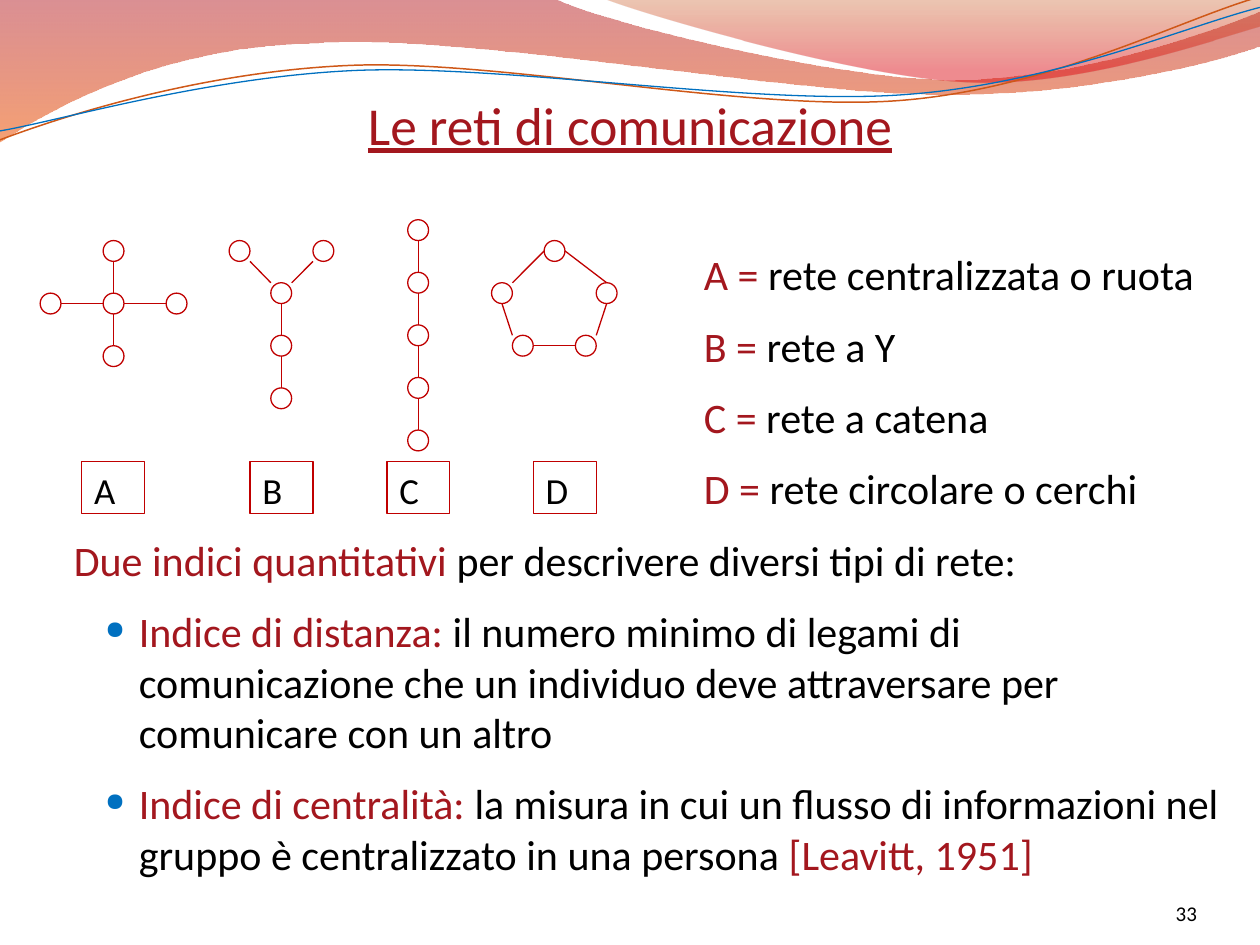
import dataclasses
import itertools
import typing

import lxml.etree
import pptx
import pptx.dml.color
import pptx.enum.shapes
import pptx.enum.text
import pptx.oxml.ns
import pptx.util

Cm = pptx.util.Cm
Pt = pptx.util.Pt
qn = pptx.oxml.ns.qn
Align = pptx.enum.text.PP_ALIGN
Anchor = pptx.enum.text.MSO_ANCHOR
Shape = pptx.enum.shapes.MSO_SHAPE
Point = tuple[float, float]


@dataclasses.dataclass(frozen=True)
class Theme:
    font: str = "Calibri"
    accent: str = "A3171E"
    ink: str = "000000"
    outline: str = "C00000"
    bullet: str = "0070C0"
    title: float = 30.5
    body: float = 24
    label: float = 21
    number: float = 12
    gap: float = 11.9
    hairline: float = 0.75


class Stop(typing.NamedTuple):
    position: float
    color: str
    opacity: int


@dataclasses.dataclass(frozen=True)
class Wave:
    start: Point
    segments: list[tuple[Point, ...]]
    stops: tuple[Stop, ...] = ()
    color: str = ""
    width: float = 0


class Link(typing.NamedTuple):
    start: int
    end: int
    leave: str
    arrive: str


@dataclasses.dataclass(frozen=True)
class Network:
    label: str
    label_x: float
    nodes: list[Point]
    links: list[Link]


THEME = Theme()
RADIUS = 0.21
STEP = 1.06
SIDES = {"N": (0, -1), "S": (0, 1), "W": (-1, 0), "E": (1, 0),
         "NW": (-1, -1), "NE": (1, -1), "SW": (-1, 1), "SE": (1, 1)}

WAVES = [
    Wave((0, 0), [((11.18, -0.03),), ((12.09, 0.43), (16.87, 1.6), (19.25, 1.6)),
                  ((21.67, 1.6), (24.33, 0.66), (25.4, 0.23)), ((25.43, 0.91),),
                  ((24.97, 1.12), (22.1, 1.93), (18.95, 1.9)),
                  ((15.8, 1.9), (9.7, 0.71), (6.53, 0.86)),
                  ((3.28, 0.91), (1.17, 2.11), (-0.03, 2.87))],
         stops=(Stop(0, "AF0911", 45), Stop(1, "EE5300", 55))),
    Wave((12.17, -0.03), [((12.93, 0.28), (17.32, 1.57), (19.53, 1.65)),
                          ((21.74, 1.75), (24.41, 0.81), (25.4, 0.53)), ((25.4, 0),)],
         stops=(Stop(0, "C24400", 30), Stop(0.8, "DC000B", 45))),
    Wave((0, 2.82), [((1.22, 2.36), (4.01, 1.45), (7.04, 1.32)),
                     ((10.03, 1.19), (15.06, 2.26), (18.11, 2.03)),
                     ((21.16, 1.8), (23.83, 0.38), (25.35, -0.05))],
         color="CF5818", width=0.85),
    Wave((0, 2.64), [((1.19, 2.44), (4.17, 1.55), (7.19, 1.42)),
                     ((10.24, 1.3), (15.16, 2.13), (18.21, 1.91)),
                     ((21.23, 1.7), (23.9, 0.53), (25.4, 0.15))],
         color="0070C0", width=0.75),
]

NETWORKS = [
    Network("A", 2.28,
            [(2.29, 6.12), (2.29, 5.06), (2.29, 7.18), (1.02, 6.12), (3.56, 6.12)],
            [Link(1, 0, "S", "N"), Link(0, 2, "S", "N"),
             Link(3, 0, "E", "W"), Link(0, 4, "E", "W")]),
    Network("B", 5.67,
            [(4.83, 5.06), (6.52, 5.06), (5.67, 5.91), (5.67, 6.97), (5.67, 8.03)],
            [Link(0, 2, "SE", "NW"), Link(1, 2, "SW", "NE"),
             Link(2, 3, "S", "N"), Link(3, 4, "S", "N")]),
    Network("C", 8.43,
            [(8.43, 4.64 + i * STEP) for i in range(5)],
            [Link(i, i + 1, "S", "N") for i in range(4)]),
    Network("D", 11.38,
            [(11.18, 5.06), (12.23, 5.91), (11.81, 6.97), (10.54, 6.97), (10.12, 5.91)],
            [Link(0, 1, "E", "N"), Link(1, 2, "S", "NE"), Link(2, 3, "W", "E"),
             Link(3, 4, "NW", "S"), Link(4, 0, "NE", "W")]),
]

LEGEND = [("A = ", "rete centralizzata o ruota"), ("B =", " rete a Y"),
          ("C =", " rete a catena"), ("D =", " rete circolare o cerchi")]
INDICES = [
    ("Due indici quantitativi ", "per descrivere diversi tipi di rete:"),
    ("Indice di distanza: ", "il numero minimo di legami di comunicazione che un "
     "individuo deve attraversare per comunicare con un altro"),
    ("Indice di centralità: ", "la misura in cui un flusso di informazioni nel gruppo "
     "è centralizzato in una persona ", "[Leavitt, 1951]"),
]


def rgb(color: str):
    return pptx.dml.color.RGBColor.from_string(color)


def add_text(p, text: str, *, size: float, color: str = THEME.ink, underline: bool = False):
    r = p.add_run()
    r.text = text
    r.font.name, r.font.size = THEME.font, Pt(size)
    r.font.color.rgb, r.font.underline = rgb(color), underline


def prepare(tf, anchor=Anchor.TOP, inset: Point = (0, 0)):
    tf.word_wrap, tf.vertical_anchor = True, anchor
    tf.margin_left = tf.margin_right = Cm(inset[0])
    tf.margin_top = tf.margin_bottom = Cm(inset[1])
    return tf


def add_box(s, x: float, y: float, w: float, h: float, anchor=Anchor.TOP):
    return prepare(s.shapes.add_textbox(Cm(x), Cm(y), Cm(w), Cm(h)).text_frame, anchor)


def add_bullet(p):
    pPr = p._p.get_or_add_pPr()
    pPr.set("marL", str(Cm(1.31)))
    pPr.set("indent", str(-Cm(0.68)))
    clr = lxml.etree.SubElement(pPr, qn("a:buClr"))
    lxml.etree.SubElement(clr, qn("a:srgbClr"), val=THEME.bullet)
    lxml.etree.SubElement(pPr, qn("a:buSzPct"), val="60000")
    lxml.etree.SubElement(pPr, qn("a:buChar"), char="●")


def add_paragraphs(tf, rows: list[tuple[str, ...]], bulleted: bool = False):
    for i, row in enumerate(rows):
        p = tf.add_paragraph() if i else tf.paragraphs[0]
        if i:
            p.space_before = Pt(THEME.gap)
            if bulleted:
                add_bullet(p)
        for text, color in zip(row, itertools.cycle((THEME.accent, THEME.ink))):
            add_text(p, text, size=THEME.body, color=color)


def bend(sp, segments: list[tuple[Point, ...]]):
    lines = iter(list(sp._element.spPr.iter(qn("a:lnTo"))))
    for seg in segments:
        group = list(itertools.islice(lines, len(seg)))
        if len(group) == 3:
            cubic = lxml.etree.Element(qn("a:cubicBezTo"))
            group[0].addprevious(cubic)
            for line in group:
                cubic.append(line[0])
                line.getparent().remove(line)


def add_wave(s, wave: Wave):
    pts = [wave.start, *itertools.chain.from_iterable(wave.segments)]
    emu = [(Cm(x), Cm(y)) for x, y in pts]
    builder = s.shapes.build_freeform(*emu[0])
    builder.add_line_segments(emu[1:], close=bool(wave.stops))
    sp = builder.convert_to_shape()
    bend(sp, wave.segments)
    sp.shadow.inherit = False
    if not wave.stops:
        sp.fill.background()
        sp.line.color.rgb, sp.line.width = rgb(wave.color), Pt(wave.width)
        return
    sp.line.fill.background()
    sp.fill.gradient()
    sp.fill.gradient_angle = 270
    for gs, stop in zip(sp.fill.gradient_stops, wave.stops):
        gs.position, gs.color.rgb = stop.position, rgb(stop.color)
    for clr, stop in zip(sp._element.spPr.iter(qn("a:srgbClr")), wave.stops):
        lxml.etree.SubElement(clr, qn("a:alpha"), val=str(stop.opacity * 1000))


def add_outline(s, kind, x: float, y: float, w: float, h: float):
    sp = s.shapes.add_shape(kind, Cm(x), Cm(y), Cm(w), Cm(h))
    sp.shadow.inherit = False
    sp.fill.background()
    sp.line.color.rgb, sp.line.width = rgb(THEME.outline), Pt(THEME.hairline)
    return sp


def touch(node: Point, side: str) -> list[int]:
    return [Cm(c + RADIUS * d) for c, d in zip(node, SIDES[side])]


def add_network(s, net: Network):
    for x, y in net.nodes:
        add_outline(s, Shape.OVAL, x - RADIUS, y - RADIUS, 2 * RADIUS, 2 * RADIUS)
    for link in net.links:
        ends = touch(net.nodes[link.start], link.leave) + touch(net.nodes[link.end], link.arrive)
        c = s.shapes.add_connector(pptx.enum.shapes.MSO_CONNECTOR.STRAIGHT, *ends)
        c.line.color.rgb, c.line.width = rgb(THEME.outline), Pt(THEME.hairline)
        lxml.etree.SubElement(c._element.spPr, qn("a:effectLst"))
    sp = add_outline(s, Shape.RECTANGLE, net.label_x - 0.63, 9.3, 1.27, 1.06)
    p = prepare(sp.text_frame, inset=(0.25, 0.13)).paragraphs[0]
    p.alignment = Align.LEFT
    add_text(p, net.label, size=THEME.label)


def main():
    prs = pptx.Presentation()
    prs.slide_width, prs.slide_height = Cm(25.4), Cm(19.05)
    s = prs.slides.add_slide(prs.slide_layouts[5])
    for wave in WAVES:
        add_wave(s, wave)
    title = s.shapes.title
    title.left, title.top, title.width, title.height = Cm(0.43), Cm(1.86), Cm(24.54), Cm(1.4)
    p = prepare(title.text_frame).paragraphs[0]
    p.alignment = Align.CENTER
    add_text(p, "Le reti di comunicazione", size=THEME.title, color=THEME.accent, underline=True)
    add_paragraphs(add_box(s, 14.19, 5.02, 10.8, 5.6), LEGEND)
    add_paragraphs(add_box(s, 1.49, 10.78, 23.13, 7), INDICES, bulleted=True)
    for net in NETWORKS:
        add_network(s, net)
    p = add_box(s, 22.02, 17.65, 2.11, 1.02, Anchor.BOTTOM).paragraphs[0]
    p.alignment = Align.RIGHT
    add_text(p, "33", size=THEME.number)
    prs.save("out.pptx")


if __name__ == "__main__":
    main()
